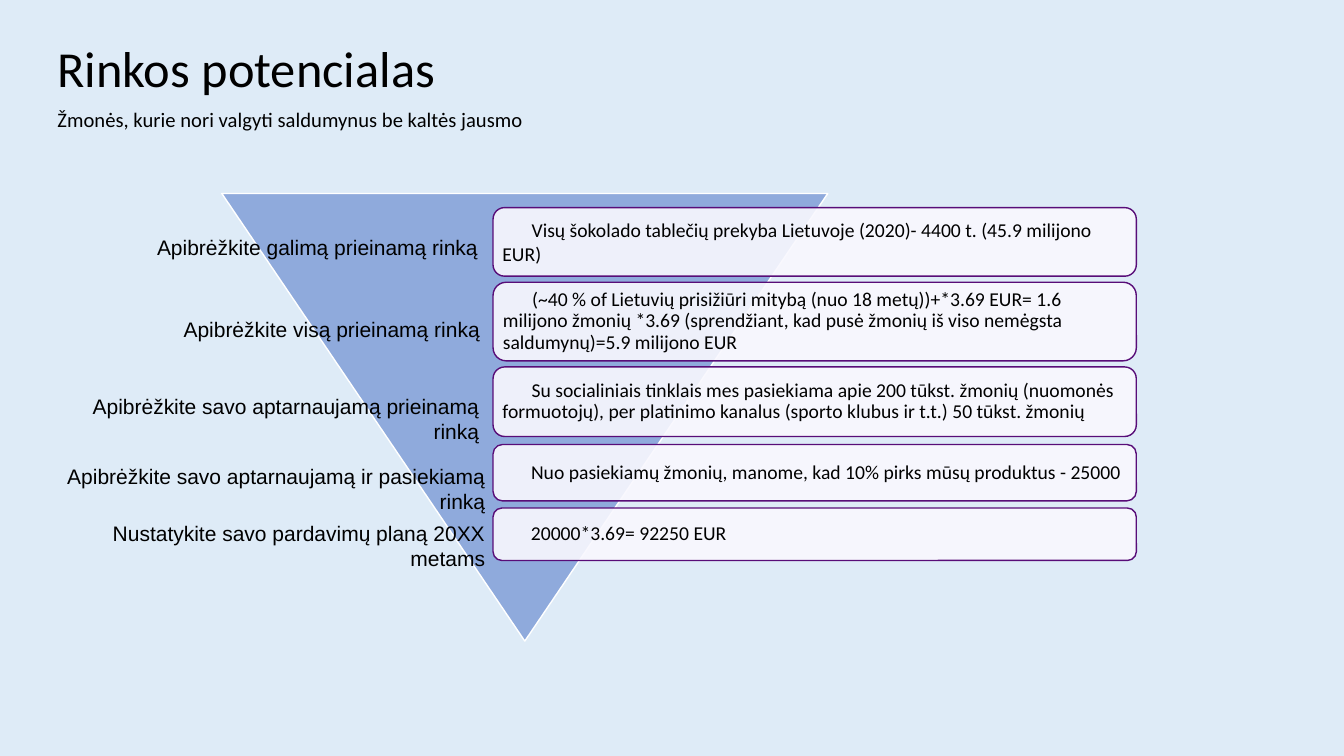
from typing import NamedTuple

from lxml import etree
from pptx import Presentation, util as u
from pptx.dml.color import RGBColor
from pptx.enum import shapes, text
from pptx.oxml.ns import qn

PX = 9144  # EMU in one px, 100 px to the inch
COLORS = {
    "back": "DEEBF7",
    "funnel": "8FAADC",
    "edge": "FFFFFF",
    "card": "F9F8FE",
    "rim": "580D78",
    "ink": "000000",
}


class Box(NamedTuple):
    left: int
    top: int
    width: int
    height: int


class Style(NamedTuple):
    font: str
    size: float
    lines: float = 1.0
    align: text.PP_ALIGN = text.PP_ALIGN.LEFT
    anchor: text.MSO_ANCHOR = text.MSO_ANCHOR.MIDDLE
    inset: tuple[int, int] = (0, 0)
    indent: int = 0


class Level(NamedTuple):
    label: str
    place: Box
    note: str
    top: int
    height: int
    lines: float = 0.9


HEAD = Style("Calibri", 36, 0.9)
SUB = Style("Calibri", 14.7, 0.9)
NOTE = Style("Calibri", 14, inset=(6, 6), indent=29)
LABEL = Style("Arial", 15, align=text.PP_ALIGN.RIGHT,
              anchor=text.MSO_ANCHOR.TOP, inset=(10, 5))
CARD_LEFT, CARD_WIDTH = 489, 638

LEVELS = [
    Level("Apibrėžkite galimą prieinamą rinką", Box(96, 228, 388, 35),
          "Visų šokolado tablečių prekyba Lietuvoje (2020)- 4400 t. "
          "(45.9 milijono EUR)", 206, 68, 1.0),
    Level("Apibrėžkite visą prieinamą rinką", Box(50, 309, 436, 35),
          "(~40 % of Lietuvių prisižiūri mitybą (nuo 18 metų))+*3.69 EUR= 1.6 "
          "milijono žmonių *3.69 (sprendžiant, kad pusė žmonių iš viso nemėgsta "
          "saldumynų)=5.9 milijono EUR", 280, 78),
    Level("Apibrėžkite savo aptarnaujamą prieinamą rinką", Box(74, 385, 411, 61),
          "Su socialiniais tinklais mes pasiekiama apie 200 tūkst. žmonių "
          "(nuomonės formuotojų), per platinimo kanalus (sporto klubus ir t.t.) "
          "50 tūkst. žmonių", 364, 69),
    Level("Apibrėžkite savo aptarnaujamą ir pasiekiamą rinką",
          Box(19, 455, 472, 61),
          "Nuo pasiekiamų žmonių, manome, kad 10% pirks mūsų produktus - 25000",
          441, 56),
    Level("Nustatykite savo pardavimų planą 20XX metams", Box(77, 511, 414, 61),
          "20000*3.69= 92250 EUR", 504, 52),
]


def rgb(name: str) -> RGBColor:
    return RGBColor.from_string(COLORS[name])


def scale(box: Box) -> list[int]:
    return [side * PX for side in box]


def write(shape, words: str, style: Style) -> None:
    frame = shape.text_frame
    frame.word_wrap = True
    frame.vertical_anchor = style.anchor
    side, edge = (gap * PX for gap in style.inset)
    frame.margin_left = frame.margin_right = side
    frame.margin_top = frame.margin_bottom = edge
    para = frame.paragraphs[0]
    para.alignment = style.align
    para.line_spacing = style.lines
    if style.indent:
        para._p.get_or_add_pPr().set("indent", str(style.indent * PX))
    run = para.add_run()
    run.text = words
    run.font.name = style.font
    run.font.size = u.Pt(style.size)
    run.font.color.rgb = rgb("ink")


def add_text(slide, box: Box, words: str, style: Style) -> None:
    write(slide.shapes.add_textbox(*scale(box)), words, style)


def add_form(slide, kind: shapes.MSO_SHAPE, box: Box, fill: str, line: str):
    shape = slide.shapes.add_shape(kind, *scale(box))
    shape.shadow.inherit = False
    shape.fill.solid()
    shape.fill.fore_color.rgb = rgb(fill)
    shape.line.color.rgb = rgb(line)
    shape.line.width = u.Pt(1)
    return shape


def add_card(slide, level: Level) -> None:
    box = Box(CARD_LEFT, level.top, CARD_WIDTH, level.height)
    card = add_form(slide, shapes.MSO_SHAPE.ROUNDED_RECTANGLE, box, "card", "rim")
    # Let the funnel show through a little
    tint = card.fill._xPr.find(qn("a:solidFill"))[0]
    etree.SubElement(tint, qn("a:alpha")).set("val", "90000")
    write(card, level.note, NOTE._replace(lines=level.lines))


def main() -> None:
    deck = Presentation()
    deck.slide_width, deck.slide_height = 1333 * PX, 750 * PX
    slide = deck.slides.add_slide(deck.slide_layouts[6])
    slide.background.fill.solid()
    slide.background.fill.fore_color.rgb = rgb("back")

    # Heading
    add_text(slide, Box(57, 41, 1220, 60), "Rinkos potencialas", HEAD)
    add_text(slide, Box(57, 107, 1220, 25),
             "Žmonės, kurie nori valgyti saldumynus be kaltės jausmo", SUB)

    # Funnel
    funnel = add_form(slide, shapes.MSO_SHAPE.ISOSCELES_TRIANGLE,
                      Box(220, 192, 601, 444), "funnel", "edge")
    funnel.rotation = 180

    # Market levels
    for level in LEVELS:
        add_card(slide, level)
        add_text(slide, level.place, level.label, LABEL)

    deck.save("out.pptx")


if __name__ == "__main__":
    main()
